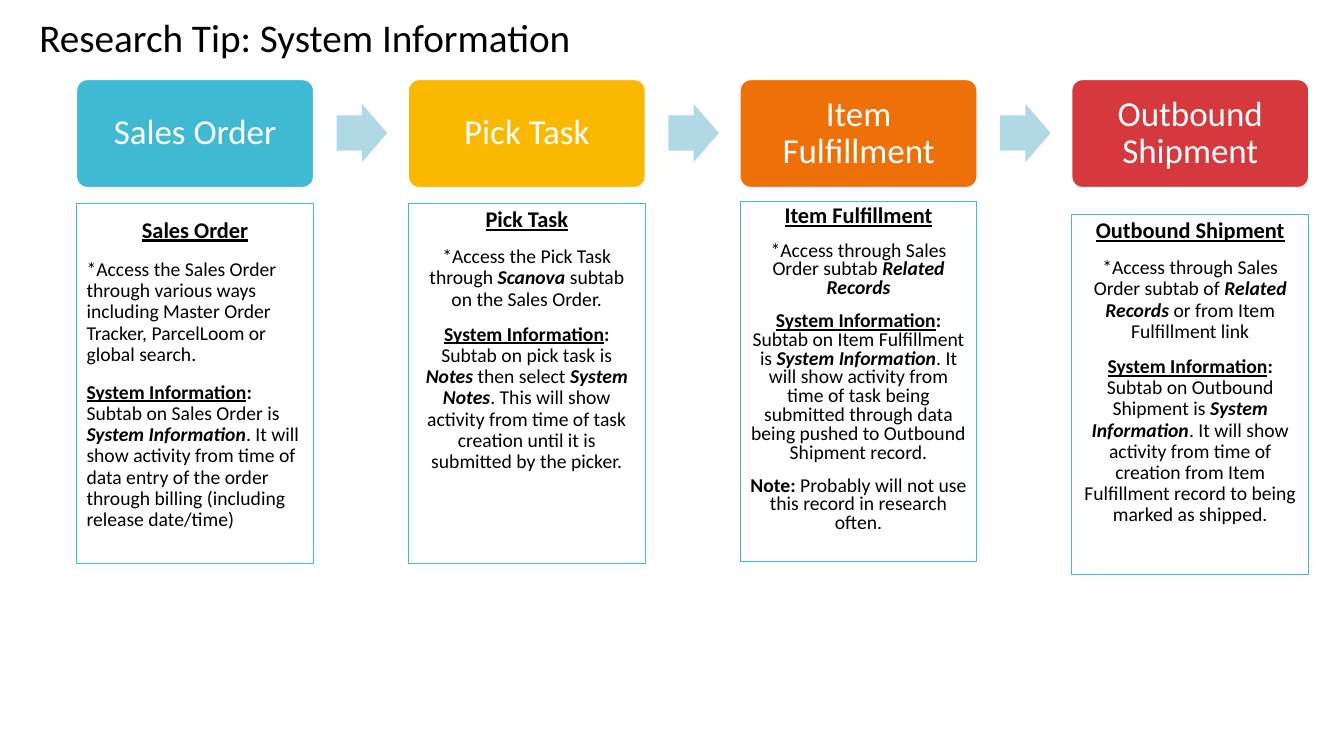
from dataclasses import dataclass

from pptx import Presentation
from pptx import util as u
from pptx.dml.color import RGBColor
from pptx.enum import shapes, text

SCALE = 9144
PITCH = 329


@dataclass(frozen=True)
class Theme:
    """Colours, font and type sizes of the slide."""
    font: str = "Calibri"
    ink: str = "000000"
    white: str = "FFFFFF"
    edge: str = "40BAD2"
    arrow: str = "B0D9E5"
    title: int = 28
    step: int = 25
    head: int = 16
    body: int = 14


T = Theme()
LEFT, MID = text.PP_ALIGN.LEFT, text.PP_ALIGN.CENTER
TOP, CENTRE = text.MSO_ANCHOR.TOP, text.MSO_ANCHOR.MIDDLE
KIND = shapes.MSO_SHAPE
SYSTEM = [("System Information", "bu"), (": ", "b")]

STEPS = [
    ("Sales Order", "40BAD2"),
    ("Pick Task", "FAB900"),
    ("Item Fulfillment", "EE7008"),
    ("Outbound Shipment", "D5393D"),
]

CARDS = [
    dict(top=202, inset=15, gap=12, align=LEFT, lead=0.9, paras=[
        [("*Access the Sales Order through various ways including Master "
          "Order Tracker, ParcelLoom or global search.", "")],
        SYSTEM + [
            ("Subtab on Sales Order is ", ""),
            ("System Information", "bi"),
            (". It will show activity from time of data entry of the order "
             "through billing (including release date/time)", "")],
    ]),
    dict(top=202, inset=5, gap=10, align=MID, lead=0.9, paras=[
        [("*Access the Pick Task through ", ""), ("Scanova", "bi"),
         (" subtab on the Sales Order.", "")],
        SYSTEM + [
            ("Subtab on pick task is ", ""), ("Notes", "bi"),
            (" then select ", ""), ("System Notes", "bi"),
            (". This will show activity from time of task creation until "
             "it is submitted by the picker.", "")],
    ]),
    dict(top=200, inset=5, gap=10, align=MID, lead=0.8, paras=[
        [("*Access through Sales Order subtab ", ""),
         ("Related Records", "bi")],
        SYSTEM + [
            ("Subtab on Item Fulfillment is ", ""),
            ("System Information", "bi"),
            (". It will show activity from time of task being submitted "
             "through data being pushed to Outbound Shipment record.", "")],
        [("Note: ", "b"),
         ("Probably will not use this record in research often.", "")],
    ]),
    dict(top=213, inset=5, gap=10, align=MID, lead=0.9, paras=[
        [("*Access through Sales Order subtab of ", ""),
         ("Related Records", "bi"),
         (" or from Item Fulfillment link", "")],
        SYSTEM + [
            ("Subtab on Outbound Shipment is ", ""),
            ("System Information", "bi"),
            (". It will show activity from time of creation from Item "
             "Fulfillment record to being marked as shipped.", "")],
    ]),
]


def px(n):
    """Turn px into EMU."""
    return u.Emu(n * SCALE)


def tint(hue):
    """Return the colour of a hex string."""
    return RGBColor.from_string(hue)


def frame(shape, side, top, anchor):
    """Set the insets, wrap and anchor of a shape and return its text frame."""
    tf = shape.text_frame
    tf.word_wrap = True
    tf.auto_size = text.MSO_AUTO_SIZE.NONE
    tf.margin_left = tf.margin_right = px(side)
    tf.margin_top = tf.margin_bottom = px(top)
    tf.vertical_anchor = anchor
    return tf


def fill_para(para, runs, size, hue, align, lead=1.0, gap=0):
    """Write styled runs into a paragraph."""
    para.alignment = align
    para.line_spacing = lead
    para.space_before = u.Pt(gap)
    for words, style in runs:
        run = para.add_run()
        run.text = words
        font = run.font
        font.name, font.size = T.font, u.Pt(size)
        font.color.rgb = tint(hue)
        font.bold = "b" in style
        font.italic = "i" in style
        font.underline = "u" in style


def add_form(slide, kind, box, fill=None, line=None, width=0.75):
    """Add a flat preset shape."""
    shape = slide.shapes.add_shape(kind, *map(px, box))
    shape.shadow.inherit = False
    if fill:
        shape.fill.solid()
        shape.fill.fore_color.rgb = tint(fill)
    else:
        shape.fill.background()
    if line:
        shape.line.color.rgb = tint(line)
        shape.line.width = u.Pt(width)
    else:
        shape.line.fill.background()
    return shape


def add_title(slide, words):
    """Place and format the title."""
    title = slide.shapes.title
    title.left, title.top, title.width, title.height = map(
        px, (29, 8, 967, 57))
    tf = frame(title, 10, 5, TOP)
    fill_para(tf.paragraphs[0], [(words, "")], T.title, T.ink, LEFT)


def add_step(slide, left, name, hue):
    """Add a coloured step of the flow."""
    step = add_form(slide, KIND.ROUNDED_RECTANGLE, (left, 79, 235, 107),
                    hue, T.white, 0.85)
    step.adjustments[0] = 0.1
    tf = frame(step, 13, 13, CENTRE)
    fill_para(tf.paragraphs[0], [(name, "")], T.step, T.white, MID, 0.9)


def add_arrow(slide, left):
    """Add an arrow between two steps."""
    arrow = add_form(slide, KIND.RIGHT_ARROW, (left, 103, 50, 58), T.arrow)
    arrow.adjustments[0] = 0.6
    arrow.adjustments[1] = 0.5


def add_card(slide, left, name, top, inset, gap, align, lead, paras):
    """Add the outlined notes below a step."""
    card = add_form(slide, KIND.RECTANGLE, (left, top, 235, 357),
                    line=T.edge)
    tf = frame(card, 10, inset, TOP)
    fill_para(tf.paragraphs[0], [(name, "bu")], T.head, T.ink, MID, lead)
    for runs in paras:
        fill_para(tf.add_paragraph(), runs, T.body, T.ink, align, lead, gap)


def main():
    """Build and save the slide."""
    deck = Presentation()
    deck.slide_width, deck.slide_height = px(1333), px(750)
    slide = deck.slides.add_slide(deck.slide_layouts[5])
    add_title(slide, "Research Tip: System Information")
    for i, ((name, hue), card) in enumerate(zip(STEPS, CARDS)):
        left = 76 + i * PITCH
        add_step(slide, left, name, hue)
        if i:
            add_arrow(slide, left - 71)
        add_card(slide, left, name, **card)
    deck.save("out.pptx")


if __name__ == "__main__":
    main()
